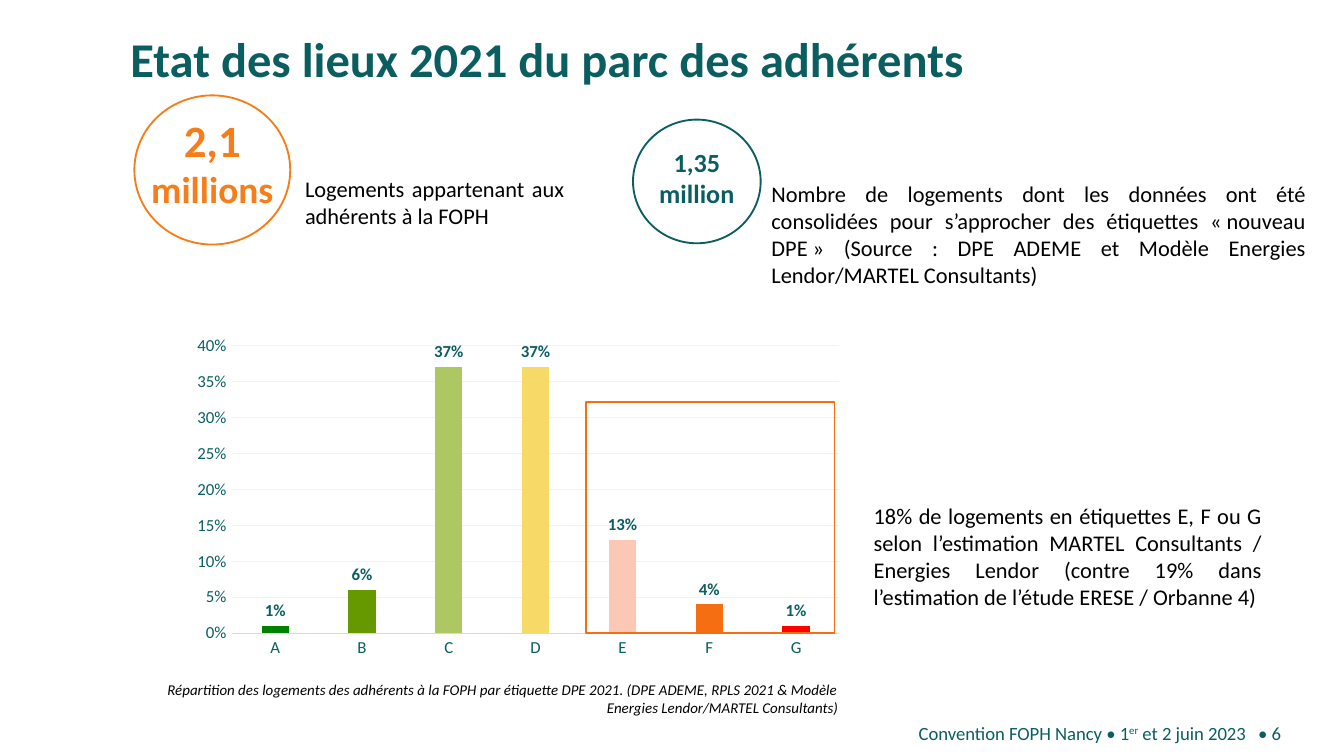
from dataclasses import dataclass

from lxml import etree
from pptx import Presentation
from pptx import util as u
from pptx.chart import data
from pptx.dml.color import RGBColor
from pptx.enum import chart as ch
from pptx.enum import shapes, text
from pptx.oxml import ns

WIDTH = 10
HEIGHT = WIDTH * 9 / 16
UNIT = WIDTH / 100  # square grid of 100 columns
HARD = chr(160)  # no-break space inside French quotes


@dataclass(frozen=True)
class Theme:
    font: str = "Calibri"
    teal: str = "0B5E60"
    gold: str = "F57E1B"
    orange: str = "F56E11"
    black: str = "000000"
    white: str = "FFFFFF"
    axis: str = "D9D9D9"
    grid: str = "F2F2F2"
    bars: tuple = ("008000", "669900", "ADC763", "F6D966",
                   "FAC8B4", "F56E11", "FF0000")
    title: int = 26
    huge: int = 24
    big: int = 20
    mid: int = 14
    body: int = 12
    foot: int = 10
    tick: int = 9
    note: int = 8


T = Theme()
ALIGN = text.PP_ALIGN
ANCHOR = text.MSO_ANCHOR


def span(*cells):
    """Turn grid counts into lengths."""
    return [u.Inches(c * UNIT) for c in cells]


def rgb(code):
    return RGBColor.from_string(code)


def apply(item, **form):
    for key, value in form.items():
        setattr(item, key, value)


def style(font, size, color, **form):
    apply(font, name=T.font, size=u.Pt(size), **form)
    font.color.rgb = rgb(color)


def stroke(line, color, width):
    line.color.rgb = rgb(color)
    line.width = u.Pt(width)


def write(frame, runs, color, align, anchor=ANCHOR.MIDDLE, inset=0,
          fit=text.MSO_AUTO_SIZE.NONE, **form):
    """Fill a frame with one paragraph of (words, size) runs."""
    apply(frame, word_wrap=True, auto_size=fit, vertical_anchor=anchor)
    for side in ("left", "right"):
        setattr(frame, f"margin_{side}", u.Inches(inset))
    for side in ("top", "bottom"):
        setattr(frame, f"margin_{side}", u.Inches(inset / 2))
    par = frame.paragraphs[0]
    par.alignment = align
    for words, size in runs:
        run = par.add_run()
        run.text = words
        style(run.font, size, color, **form)
    return par


def label(slide, at, runs, color=T.black, align=ALIGN.JUSTIFY, **form):
    box = slide.shapes.add_textbox(*span(*at))
    return write(box.text_frame, runs, color, align, **form)


def outline(slide, kind, at, color, fill=None):
    shape = slide.shapes.add_shape(kind, *span(*at))
    shape.shadow.inherit = False
    if fill:
        shape.fill.solid()
        shape.fill.fore_color.rgb = rgb(fill)
    else:
        shape.fill.background()
    stroke(shape.line, color, 1)


def badge(slide, ring, top, high, runs, color):
    """Draw a ringed key figure."""
    outline(slide, shapes.MSO_SHAPE.OVAL, ring, color, T.white)
    label(slide, (ring[0], top, ring[2], high), runs, color, ALIGN.CENTER,
          anchor=ANCHOR.TOP, inset=0.1, bold=True,
          fit=text.MSO_AUTO_SIZE.SHAPE_TO_FIT_TEXT)


def heading(slide, words):
    title = slide.shapes.title
    at = span(9.7, 2.8, 87.6, 8.7)
    apply(title, **dict(zip(("left", "top", "width", "height"), at)))
    par = write(title.text_frame, [(words, T.title)], T.teal, ALIGN.LEFT,
                anchor=ANCHOR.TOP, bold=True)
    par.line_spacing = 0.85


def place(chart, **shares):
    """Pin the inner plot area to shares of the chart."""
    area = chart._chartSpace.chart.plotArea
    for old in area.findall(ns.qn("c:layout")):
        area.remove(old)
    layout = etree.Element(ns.qn("c:layout"))
    area.insert(0, layout)
    manual = etree.SubElement(layout, ns.qn("c:manualLayout"))
    form = dict(layoutTarget="inner", xMode="edge", yMode="edge", **shares)
    for key, value in form.items():
        etree.SubElement(manual, ns.qn(f"c:{key}"), val=str(value))


def bars(slide, at, cats, vals):
    feed = data.CategoryChartData(number_format="0%")
    feed.categories = cats
    feed.add_series("Series 1", vals)
    kind = ch.XL_CHART_TYPE.COLUMN_CLUSTERED
    chart = slide.shapes.add_chart(kind, *span(*at), feed).chart
    apply(chart, has_legend=False, has_title=False)
    style(chart.font, T.foot, T.teal)

    xaxis, yaxis = chart.category_axis, chart.value_axis
    for axis in (xaxis, yaxis):
        apply(axis, major_tick_mark=ch.XL_TICK_MARK.NONE,
              minor_tick_mark=ch.XL_TICK_MARK.NONE)
        style(axis.tick_labels.font, T.tick, T.teal)
    stroke(xaxis.format.line, T.axis, 0.75)
    apply(yaxis, minimum_scale=0, maximum_scale=0.4, major_unit=0.05,
          has_major_gridlines=True)
    yaxis.format.line.fill.background()
    stroke(yaxis.major_gridlines.format.line, T.grid, 0.75)
    apply(yaxis.tick_labels, number_format="0%",
          number_format_is_linked=False)

    plot = chart.plots[0]
    apply(plot, gap_width=219, overlap=-27, vary_by_categories=False)
    series = plot.series[0]
    tags = series.data_labels
    apply(tags, show_value=True, number_format="0%",
          number_format_is_linked=False,
          position=ch.XL_LABEL_POSITION.OUTSIDE_END)
    style(tags.font, T.tick, T.teal, bold=True)
    fills = [series.format.fill]
    fills += [series.points[i].format.fill for i in range(len(vals))]
    for fill, color in zip(fills, (T.orange, *T.bars)):
        fill.solid()
        fill.fore_color.rgb = rgb(color)
    left, top = 1 / 12, 1 / 16
    place(chart, x=left, y=top, w=0.97 - left, h=0.82)


def footer(slide):
    par = label(slide, (33.6, 53.8, 59.1, 1.5),
                [("Convention FOPH Nancy • 1", T.foot), ("er", T.foot),
                 (" et 2 juin 2023", T.foot)], T.teal, ALIGN.RIGHT)
    par.runs[1].font._element.set("baseline", "30000")
    label(slide, (93.3, 53.8, 3.9, 1.5), [(" • 6", T.foot)], T.teal,
          ALIGN.LEFT)


def main():
    deck = Presentation()
    apply(deck, slide_width=u.Inches(WIDTH), slide_height=u.Inches(HEIGHT))
    slide = deck.slides.add_slide(deck.slide_layouts[5])
    heading(slide, "Etat des lieux 2021 du parc des adhérents")
    footer(slide)
    label(slide, (9.7, 48.7, 52.7, 6.6),
          [("Répartition des logements des adhérents à la FOPH par étiquette "
            "DPE 2021. (DPE ADEME, RPLS 2021 & Modèle Energies "
            "Lendor/MARTEL Consultants)", T.note)],
          align=ALIGN.RIGHT, italic=True)

    badge(slide, (10, 7.1, 11.6, 11.1), 7.9, 8.4,
          [("2,1", T.huge), (" millions", T.big)], T.gold)
    badge(slide, (47.1, 8.9, 9.5, 9.2), 10.4, 5.7,
          [("1,35 million", T.mid)], T.teal)
    notes = (
        ((22.7, 12.4, 19.3, 5.3),
         "Logements appartenant aux adhérents à la FOPH"),
        ((57.4, 15.2, 39.8, 4.4),
         "Nombre de logements dont les données ont été consolidées pour "
         f"s’approcher des étiquettes «{HARD}nouveau DPE{HARD}» (Source : "
         "DPE ADEME et Modèle Energies Lendor/MARTEL Consultants)"),
        ((65, 38.2, 28.9, 6.4),
         "18% de logements en étiquettes E, F ou G selon l’estimation MARTEL "
         "Consultants / Energies Lendor (contre 19% dans l’estimation de "
         "l’étude ERESE / Orbanne 4)"),
    )
    for at, words in notes:
        label(slide, at, [(words, T.body)])

    bars(slide, (13, 24.1, 51, 26.1), "ABCDEFG",
         (0.01, 0.06, 0.37, 0.37, 0.13, 0.04, 0.01))
    outline(slide, shapes.MSO_SHAPE.RECTANGLE, (43.6, 29.9, 18.5, 17.2),
            T.orange)
    deck.save("out.pptx")


if __name__ == "__main__":
    main()
